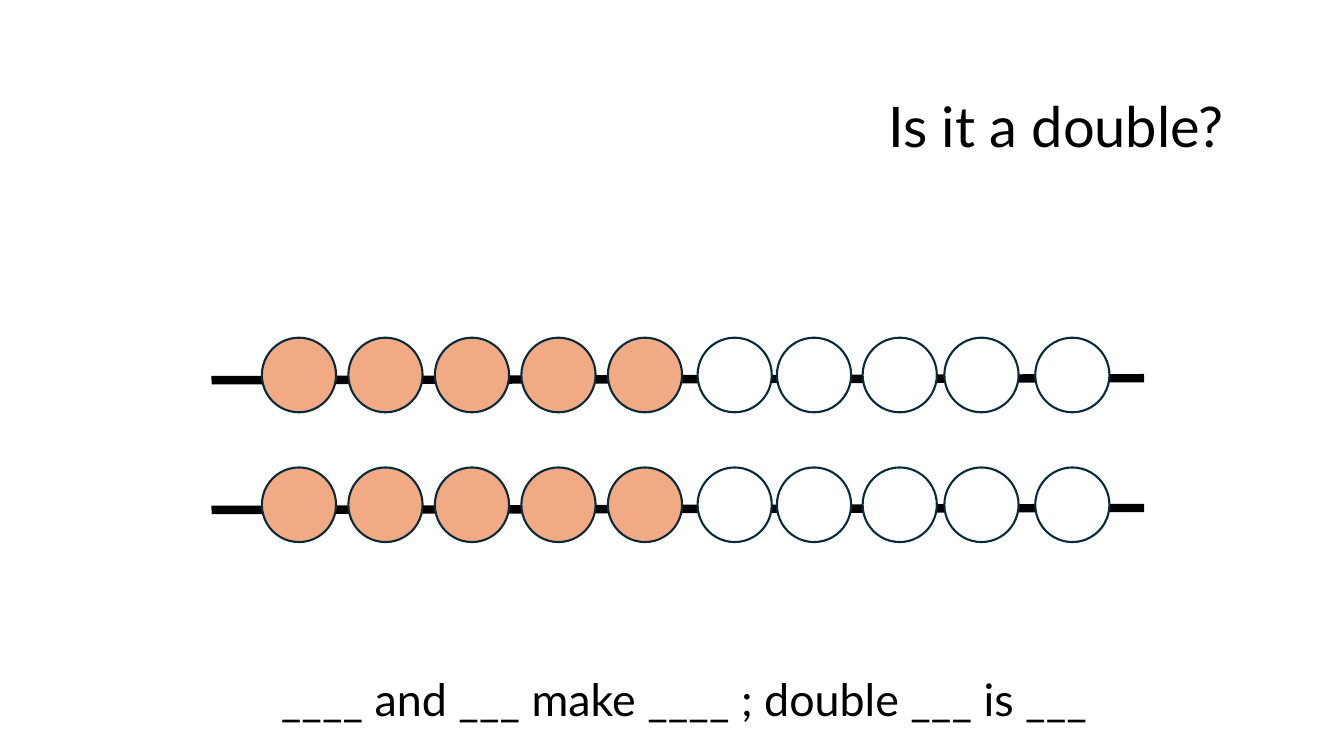
from lxml import etree
from pptx import Presentation
from pptx.dml.color import RGBColor
from pptx.enum.shapes import MSO_CONNECTOR, MSO_SHAPE
from pptx.enum.text import MSO_AUTO_SIZE, PP_ALIGN
from pptx.oxml.ns import qn
from pptx.util import Cm, Pt

STRAIGHT, OVAL = MSO_CONNECTOR.STRAIGHT, MSO_SHAPE.OVAL
LEFT, RIGHT = PP_ALIGN.LEFT, PP_ALIGN.RIGHT
GROW = MSO_AUTO_SIZE.SHAPE_TO_FIT_TEXT

BLACK = RGBColor(0x00, 0x00, 0x00)
WHITE = RGBColor(0xFF, 0xFF, 0xFF)
ORANGE = RGBColor(0xF2, 0xAA, 0x84)
OUTLINE = RGBColor(0x09, 0x2A, 0x39)

# text, (left, top, width, height) in cm, size in points, alignment
QUESTION = ("Is it a double?", (21.59, 2.18, 9.5, 1.96), 40, RIGHT)
SENTENCE = ("____ and ___ make ____ ; double ___ is ___",
            (6.83, 16.81, 22, 1.63), 32, LEFT)

# Lengths in cm
ORANGE_LEFTS = [6.6 + 2.18 * number for number in range(5)]
WHITE_LEFTS = [17.58, 19.58, 21.74, 23.8, 26.09]
BEADS = ([(left, ORANGE) for left in ORANGE_LEFTS]
         + [(left, WHITE) for left in WHITE_LEFTS])
BEAD_WIDTH, BEAD_HEIGHT = 1.87, 1.88
ROW_TOPS = [8.51, 11.78]
STRING_LEFT, STRING_RIGHT = 5.33, 28.83
STRING_START_DROP, STRING_END_DROP = 1.07, 1.02


def add_label(page, text, place, size, alignment):
    box = page.shapes.add_textbox(*map(Cm, place))
    frame = box.text_frame
    frame.word_wrap = True
    frame.auto_size = GROW
    para = frame.paragraphs[0]
    para.alignment = alignment
    span = para.add_run()
    span.text = text
    for name, value in {"name": "Lato", "size": Pt(size)}.items():
        setattr(span.font, name, value)
    span.font.color.rgb = BLACK


def add_bead_string(page, top):
    """Draw one string with its ten beads, whose tops lie at the given height."""
    string = page.shapes.add_connector(
        STRAIGHT, Cm(STRING_LEFT), Cm(top + STRING_START_DROP),
        Cm(STRING_RIGHT), Cm(top + STRING_END_DROP))
    string.line.color.rgb = BLACK
    string.line.width = Pt(6)
    etree.SubElement(string.element.spPr, qn("a:effectLst"))
    for left, colour in BEADS:
        bead = page.shapes.add_shape(
            OVAL, Cm(left), Cm(top), Cm(BEAD_WIDTH), Cm(BEAD_HEIGHT))
        bead.shadow.inherit = False
        bead.fill.solid()
        bead.fill.fore_color.rgb = colour
        bead.line.color.rgb = OUTLINE
        bead.line.width = Pt(1.5)


def main():
    deck = Presentation()
    deck.slide_width, deck.slide_height = Cm(33.87), Cm(19.05)
    page = deck.slides.add_slide(deck.slide_layouts[6])
    add_label(page, *QUESTION)
    for top in ROW_TOPS:
        add_bead_string(page, top)
    add_label(page, *SENTENCE)
    deck.save("out.pptx")


if __name__ == "__main__":
    main()
